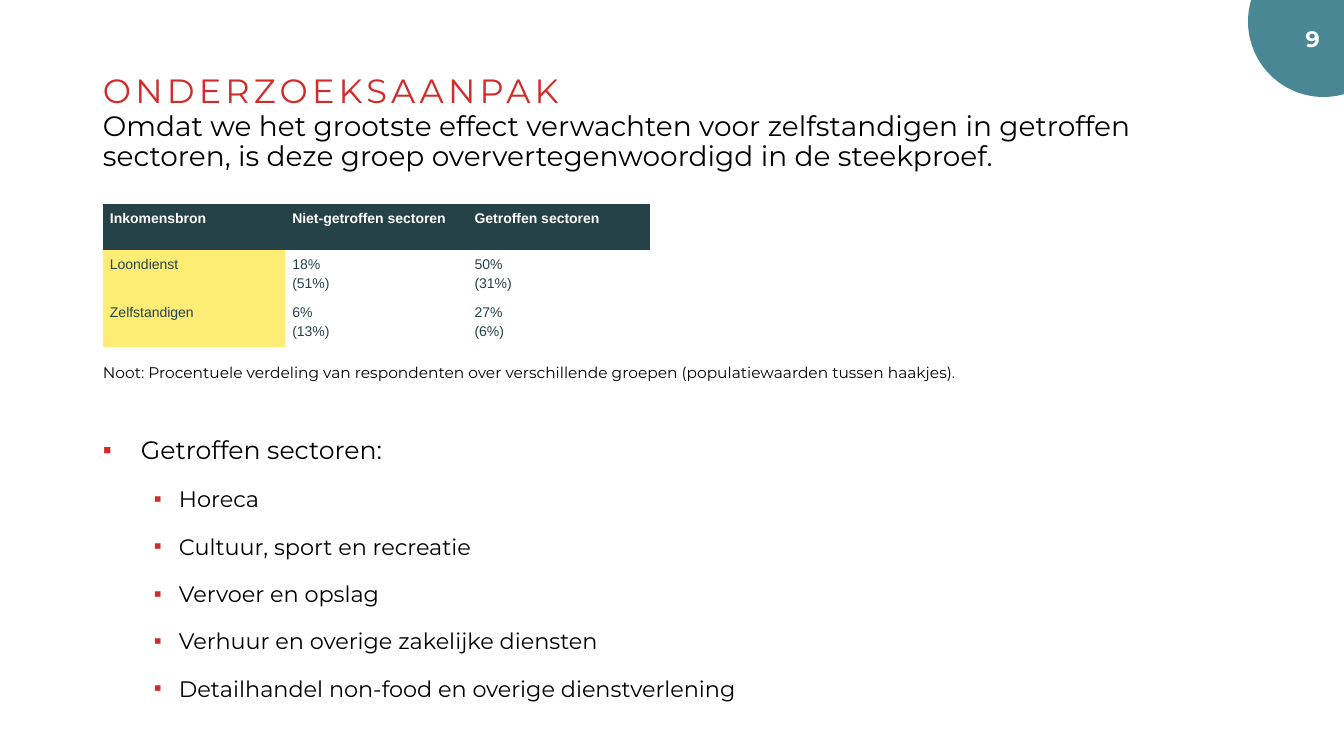
from dataclasses import dataclass
from typing import NamedTuple

from lxml import etree
from pptx import Presentation
from pptx.dml.color import RGBColor
from pptx.enum.shapes import MSO_SHAPE
from pptx.enum.text import PP_ALIGN
from pptx.oxml.ns import qn
from pptx.util import Emu, Pt

OVAL = MSO_SHAPE.OVAL
LEFT, RIGHT, EVEN = PP_ALIGN.LEFT, PP_ALIGN.RIGHT, PP_ALIGN.JUSTIFY
PLAIN = "{2D5ABB26-0587-4C30-8999-92F81FD0307C}"


@dataclass(frozen=True)
class Theme:
    paper: str = "FEFFFE"
    ink: str = "000000"
    red: str = "D22C2A"
    teal: str = "498794"
    dark: str = "264249"
    yellow: str = "FDED75"
    sans: str = "Montserrat"
    grid: str = "Arial"
    head: int = 24
    title: int = 20
    main: int = 18
    sub: int = 16
    note: int = 11
    cell: int = 10


class Box(NamedTuple):
    left: int
    top: int
    width: int
    height: int


@dataclass(frozen=True)
class Block:
    box: Box
    text: str
    size: int
    ink: str
    bold: bool = False
    track: int = 0
    align: PP_ALIGN = LEFT


@dataclass(frozen=True)
class Point:
    text: str
    level: int = 1


THEME = Theme()

BLOCKS = [
    Block(Box(1148, 23, 182, 37), "9", THEME.sub, THEME.paper, bold=True,
          track=180, align=RIGHT),
    Block(Box(93, 69, 1159, 33), "ONDERZOEKSAANPAK", THEME.head, THEME.red,
          track=300),
    Block(Box(93, 107, 1158, 81),
          "Omdat we het grootste effect verwachten voor zelfstandigen in "
          "getroffen sectoren, is deze groep oververtegenwoordigd in de "
          "steekproef.", THEME.title, THEME.ink),
    Block(Box(93, 360, 1159, 30),
          "Noot: Procentuele verdeling van respondenten over verschillende "
          "groepen (populatiewaarden tussen haakjes).", THEME.note, THEME.ink),
]

POINTS = [
    Point("Getroffen sectoren:", 0),
    Point("Horeca"),
    Point("Cultuur, sport en recreatie"),
    Point("Vervoer en opslag"),
    Point("Verhuur en overige zakelijke diensten"),
    Point("Detailhandel non-food en overige dienstverlening"),
]

ROWS = [
    ["Inkomensbron", "Niet-getroffen sectoren", "Getroffen sectoren"],
    ["Loondienst", "18%\n(51%)", "50%\n(31%)"],
    ["Zelfstandigen", "6%\n(13%)", "27%\n(6%)"],
]


def px(count: int) -> Emu:
    return Emu(round(count * 914400 / 100.8))


def tint(code: str) -> RGBColor:
    return RGBColor.from_string(code)


def mark(par, left: int, hang: int) -> None:
    props = par._p.get_or_add_pPr()
    props.set("marL", str(px(left)))
    props.set("indent", str(-px(hang)))
    shade = etree.SubElement(props, qn("a:buClr"))
    etree.SubElement(shade, qn("a:srgbClr"), val=THEME.red)
    etree.SubElement(props, qn("a:buFont"), typeface=THEME.grid)
    etree.SubElement(props, qn("a:buChar"), char="▪")


def write(par, text: str, *, size: int, ink: str, face: str = THEME.sans,
          bold: bool = False, track: int = 0, align: PP_ALIGN = LEFT,
          space: float = 0.9, before: int = 0) -> None:
    par.alignment = align
    par.line_spacing = space
    par.space_before = Pt(before)
    run = par.add_run()
    run.text = text
    font = run.font
    font.name, font.size, font.bold = face, Pt(size), bold
    font.color.rgb = tint(ink)
    if track:
        run._r.get_or_add_rPr().set("spc", str(track))


def frame(slide, box: Box):
    body = slide.shapes.add_textbox(*map(px, box)).text_frame
    body.word_wrap = True
    body.margin_left = body.margin_right = px(10)
    body.margin_top = body.margin_bottom = px(5)
    return body


def draw_disc(slide, box: Box) -> None:
    disc = slide.shapes.add_shape(OVAL, *map(px, box))
    disc.shadow.inherit = False
    disc.fill.solid()
    disc.fill.fore_color.rgb = tint(THEME.teal)
    disc.line.fill.background()


def draw_block(slide, block: Block) -> None:
    write(frame(slide, block.box).paragraphs[0], block.text, size=block.size,
          ink=block.ink, bold=block.bold, track=block.track,
          align=block.align)


def draw_list(slide, box: Box, points: list[Point]) -> None:
    body = frame(slide, box)
    for spot, point in enumerate(points):
        par = body.add_paragraph() if spot else body.paragraphs[0]
        par.level = point.level
        if point.level:
            mark(par, 76, 25)
            write(par, point.text, size=THEME.sub, ink=THEME.ink,
                  space=1.5, before=5)
        else:
            mark(par, 38, 38)
            write(par, point.text, size=THEME.main, ink=THEME.ink)


def draw_cell(cell, text: str, top: bool, side: bool) -> None:
    cell.margin_left = cell.margin_right = px(7)
    cell.margin_top = cell.margin_bottom = px(4)
    if top or side:
        cell.fill.solid()
        cell.fill.fore_color.rgb = tint(THEME.dark if top else THEME.yellow)
    else:
        cell.fill.background()
    body = cell.text_frame
    for spot, line in enumerate(text.split("\n")):
        par = body.add_paragraph() if spot else body.paragraphs[0]
        write(par, line, size=THEME.cell, face=THEME.grid, bold=top,
              ink=THEME.paper if top else THEME.dark, align=EVEN, space=1.2)


def draw_table(slide, box: Box, rows: list[list[str]]) -> None:
    table = slide.shapes.add_table(len(rows), len(rows[0]),
                                   *map(px, box)).table
    table.first_row = table.horz_banding = False
    table._tbl.tblPr.find(qn("a:tableStyleId")).text = PLAIN
    for down, row in enumerate(rows):
        for over, text in enumerate(row):
            draw_cell(table.cell(down, over), text, down == 0, over == 0)


def main() -> None:
    deck = Presentation()
    deck.slide_width, deck.slide_height = px(1344), px(756)
    slide = deck.slides.add_slide(deck.slide_layouts[6])
    back = slide.background.fill
    back.solid()
    back.fore_color.rgb = tint(THEME.paper)
    draw_disc(slide, Box(1248, -54, 151, 151))
    for block in BLOCKS:
        draw_block(slide, block)
    draw_list(slide, Box(93, 433, 1159, 290), POINTS)
    draw_table(slide, Box(103, 204, 547, 138), ROWS)
    deck.save("out.pptx")


if __name__ == "__main__":
    main()
